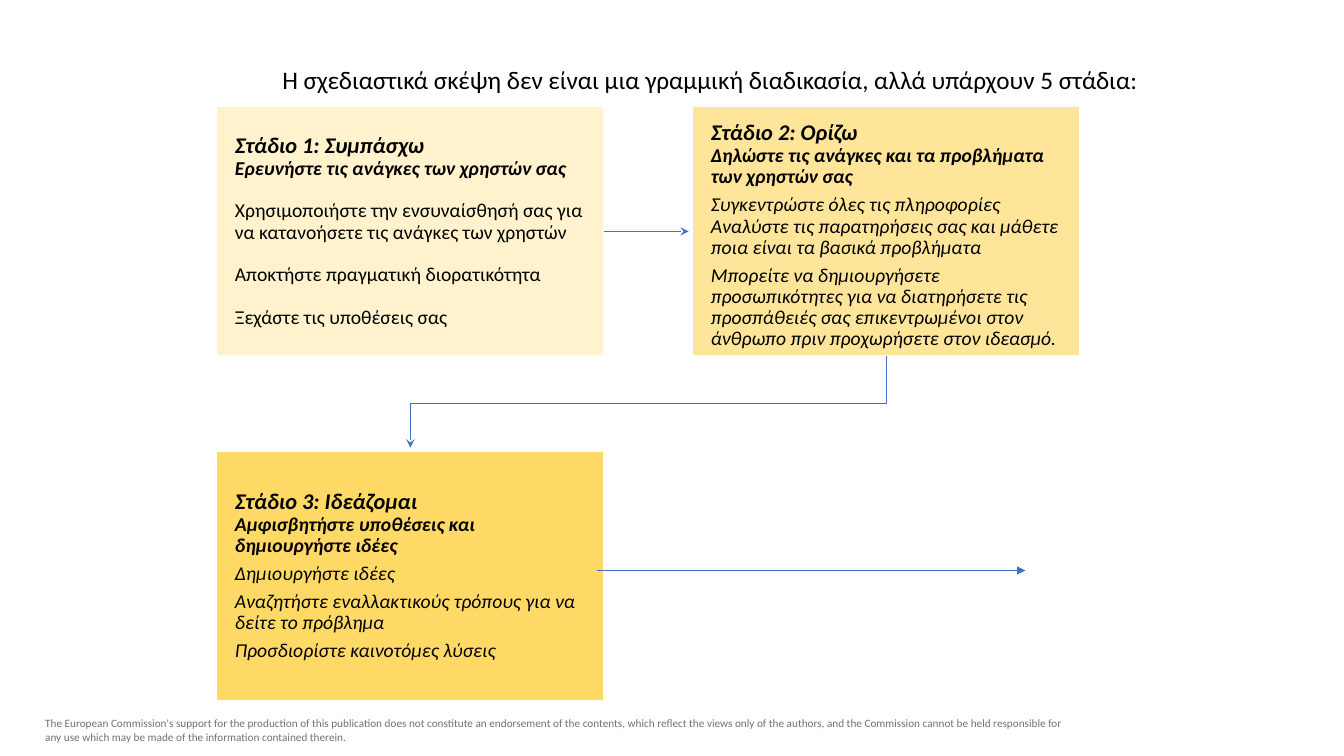
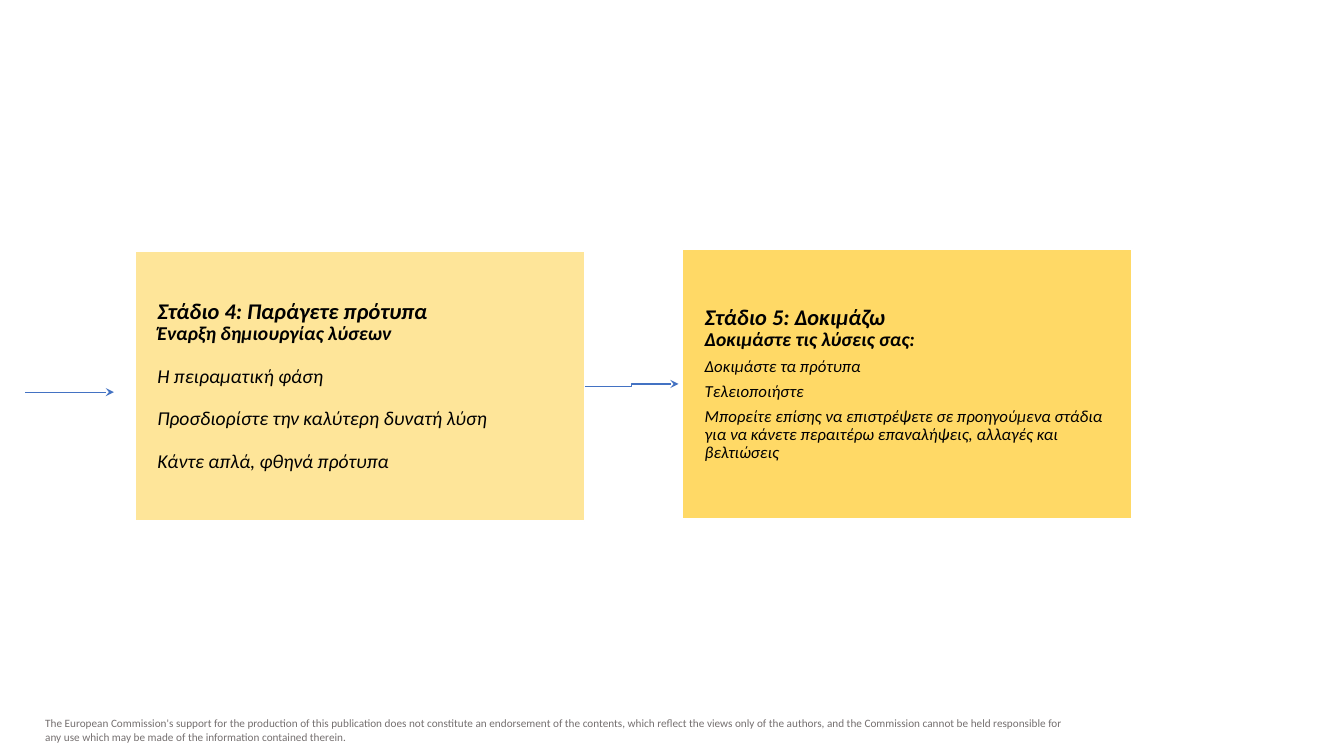
from lxml.etree import SubElement
from pptx import Presentation
from pptx.dml.color import RGBColor
from pptx.enum.shapes import MSO_CONNECTOR as Connector, MSO_SHAPE as Shape
from pptx.enum.text import MSO_ANCHOR as Anchor, MSO_AUTO_SIZE as AutoSize, PP_ALIGN as Align
from pptx.oxml.ns import qn
from pptx.util import Inches, Pt

FONT = "Calibri"
BLACK = RGBColor(0x00, 0x00, 0x00)
WHITE = RGBColor(0xFF, 0xFF, 0xFF)
GREY = RGBColor(0x75, 0x70, 0x70)
BLUE = RGBColor(0x43, 0x72, 0xC3)
CREAM = RGBColor(0xFF, 0xF2, 0xCC)
SAND = RGBColor(0xFE, 0xE5, 0x99)
GOLD = RGBColor(0xFF, 0xD9, 0x66)

FOOTER = (
    "The European Commission's support for the production of this publication does not "
    "constitute an endorsement of the contents, which reflect the views only of the authors, "
    "and the Commission cannot be held responsible for any use which may be made of the "
    "information contained therein."
)
TITLE = "Η σχεδιαστικά σκέψη δεν είναι μια γραμμική διαδικασία, αλλά υπάρχουν 5 στάδια:"

TIGHT, LOOSE = Pt(4.9), Pt(15.2)
TIP_GAP = Inches(0.04)
FIRST_GRID = {"left": 2.15, "top": 1.06, "across": 4.72, "down": 3.42,
              "width": 3.84, "height": 2.47, "inset": 0.18}
SECOND_GRID = {"left": 1.34, "top": 2.49, "across": 5.43, "down": -0.02,
               "width": 4.46, "height": 2.68, "inset": 0.22}

STAGES = [
    (FIRST_GRID, 0, 0, CREAM, LOOSE, 14, False, [
        "Στάδιο 1: Συμπάσχω",
        "Ερευνήστε τις ανάγκες των χρηστών σας",
        "Χρησιμοποιήστε την ενσυναίσθησή σας για να κατανοήσετε τις ανάγκες των χρηστών",
        "Αποκτήστε πραγματική διορατικότητα",
        "Ξεχάστε τις υποθέσεις σας",
    ]),
    (FIRST_GRID, 1, 0, SAND, TIGHT, 14, True, [
        "Στάδιο 2: Ορίζω",
        "Δηλώστε τις ανάγκες και τα προβλήματα των χρηστών σας",
        "Συγκεντρώστε όλες τις πληροφορίες Αναλύστε τις παρατηρήσεις σας και μάθετε "
        "ποια είναι τα βασικά προβλήματα",
        "Μπορείτε να δημιουργήσετε προσωπικότητες για να διατηρήσετε τις προσπάθειές σας "
        "επικεντρωμένοι στον άνθρωπο πριν προχωρήσετε στον ιδεασμό.",
    ]),
    (FIRST_GRID, 0, 1, GOLD, TIGHT, 14, True, [
        "Στάδιο 3: Ιδεάζομαι",
        "Αμφισβητήστε υποθέσεις και δημιουργήστε ιδέες",
        "Δημιουργήστε ιδέες",
        "Αναζητήστε εναλλακτικούς τρόπους για να δείτε το πρόβλημα",
        "Προσδιορίστε καινοτόμες λύσεις",
    ]),
    (SECOND_GRID, 0, 0, SAND, LOOSE, 14, True, [
        "Στάδιο 4: Παράγετε πρότυπα",
        "Έναρξη δημιουργίας λύσεων",
        "Η πειραματική φάση",
        "Προσδιορίστε την καλύτερη δυνατή λύση",
        "Κάντε απλά, φθηνά πρότυπα",
    ]),
    (SECOND_GRID, 1, 1, GOLD, TIGHT, 12, True, [
        "Στάδιο 5: Δοκιμάζω",
        "Δοκιμάστε τις λύσεις σας:",
        "Δοκιμάστε τα πρότυπα",
        "Τελειοποιήστε",
        "Μπορείτε επίσης να επιστρέψετε σε προηγούμενα στάδια για να κάνετε περαιτέρω "
        "επαναλήψεις, αλλαγές και βελτιώσεις",
    ]),
]


def set_font(para, size, color, bold=False, italic=False):
    font = para.font
    font.name, font.size, font.bold, font.italic = FONT, Pt(size), bold, italic
    font.color.rgb = color


def style_arrow(arrow, head="stealth"):
    arrow.line.color.rgb = BLUE
    arrow.line.width = Pt(0.75)
    properties = arrow.element.spPr
    SubElement(properties.find(qn("a:ln")), qn("a:tailEnd"), type=head)
    SubElement(properties, qn("a:effectLst"))


deck = Presentation()
deck.slide_width, deck.slide_height = Inches(13.33), Inches(7.5)
title_page = deck.slides.add_slide(deck.slide_layouts[5])
plain_page = deck.slides.add_slide(deck.slide_layouts[6])

for page in (title_page, plain_page):
    footer = page.shapes.add_textbox(Inches(0.35), Inches(7.06), Inches(10.46), Inches(0.37))
    footer.text_frame.word_wrap = True
    footer.text_frame.text = FOOTER
    set_font(footer.text_frame.paragraphs[0], 8, GREY)

title = title_page.shapes.title
title.left, title.top, title.width, title.height = (
    Inches(2.7), Inches(0.59), Inches(9.11), Inches(0.46))
title.text_frame.text = TITLE
title.text_frame.auto_size = AutoSize.NONE
title.text_frame.vertical_anchor = Anchor.TOP
title.text_frame.paragraphs[0].alignment = Align.LEFT
set_font(title.text_frame.paragraphs[0], 18, BLACK)

boxes = []
for grid, column, row, fill, gap, body_size, body_italic, lines in STAGES:
    page = title_page if grid is FIRST_GRID else plain_page
    box = page.shapes.add_shape(
        Shape.RECTANGLE,
        Inches(grid["left"] + column * grid["across"]),
        Inches(grid["top"] + row * grid["down"]),
        Inches(grid["width"]), Inches(grid["height"]))
    box.shadow.inherit = False
    box.fill.solid()
    box.fill.fore_color.rgb = fill
    box.line.color.rgb = WHITE
    box.line.width = Pt(1)
    frame = box.text_frame
    frame.word_wrap = True
    frame.vertical_anchor = Anchor.MIDDLE
    frame.margin_left = frame.margin_right = Inches(grid["inset"])
    frame.margin_top = frame.margin_bottom = Inches(grid["inset"] + 0.01)
    for number, line in enumerate(lines):
        para = frame.paragraphs[0] if number == 0 else frame.add_paragraph()
        para.text = line
        para.alignment = Align.LEFT
        para.line_spacing = 0.9
        if number < 2:
            set_font(para, 14 if number else 16, BLACK, True, True)
        else:
            para.space_before = gap
            set_font(para, body_size, BLACK, False, body_italic)
    boxes.append(box)

empathise, define, ideate, prototype, test = boxes
define.text_frame.margin_bottom = Inches(0.1)

for page, kind, start, end in (
    (title_page, Connector.STRAIGHT, empathise, define),
    (plain_page, Connector.ELBOW, prototype, test),
):
    arrow = page.shapes.add_connector(
        kind,
        start.left + start.width, start.top + start.height // 2,
        end.left - TIP_GAP, end.top + end.height // 2)
    arrow.begin_connect(start, 3)
    style_arrow(arrow)

for page, left, right, level, head in (
    (title_page, 5.92, 10.17, 5.66, "triangle"),
    (plain_page, 0.25, 1.13, 3.89, "stealth"),
):
    arrow = page.shapes.add_connector(
        Connector.STRAIGHT, Inches(left), Inches(level), Inches(right), Inches(level))
    style_arrow(arrow, head)

start_x = define.left + define.width // 2
end_x = ideate.left + ideate.width // 2
start_y = define.top + define.height
end_y = ideate.top - TIP_GAP
turn_y = (start_y + ideate.top) // 2
outline = title_page.shapes.build_freeform(start_x, start_y)
outline.add_line_segments([(start_x, turn_y), (end_x, turn_y), (end_x, end_y)], close=False)
bent_arrow = outline.convert_to_shape()
bent_arrow.fill.background()
style_arrow(bent_arrow)

deck.save("out.pptx")
